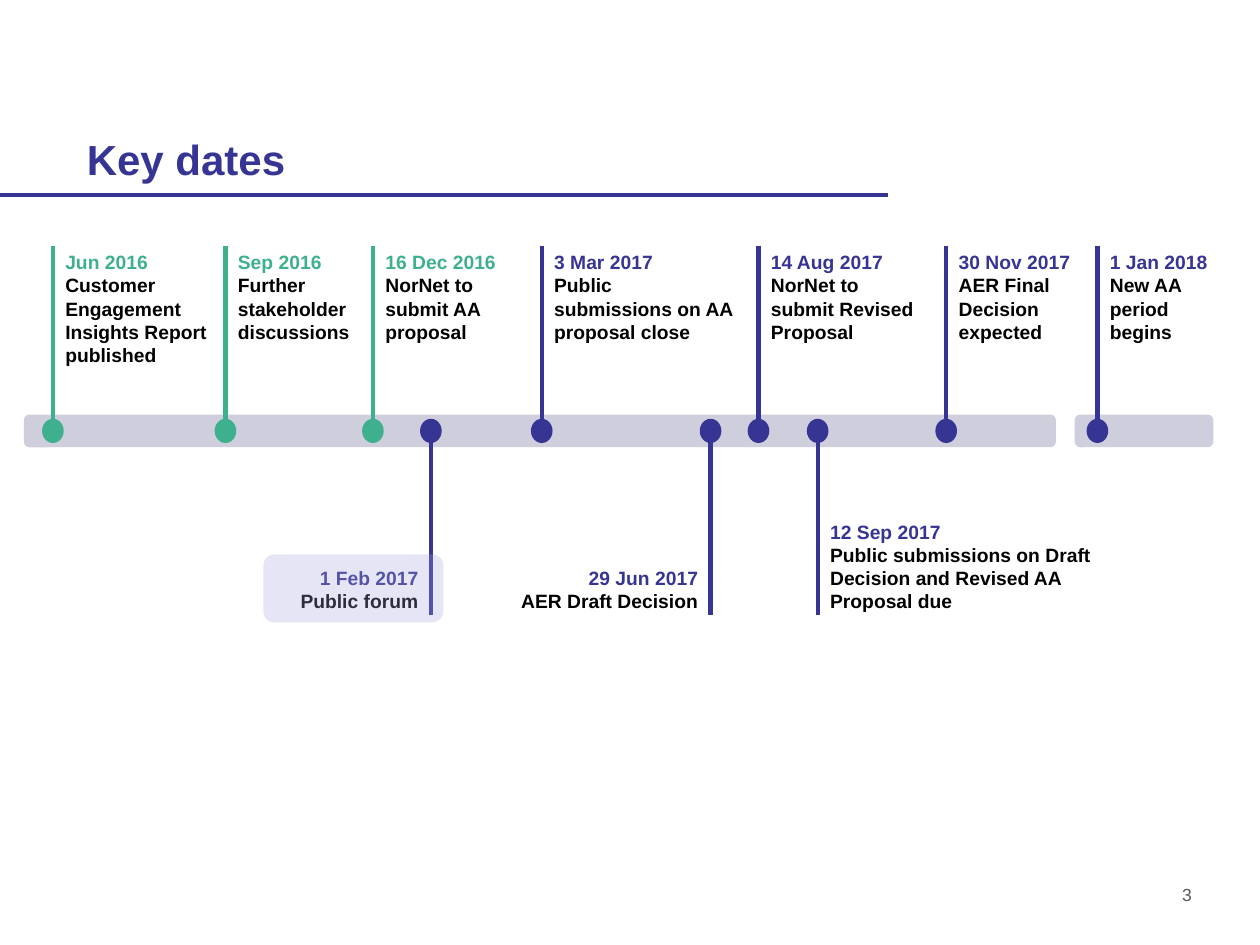
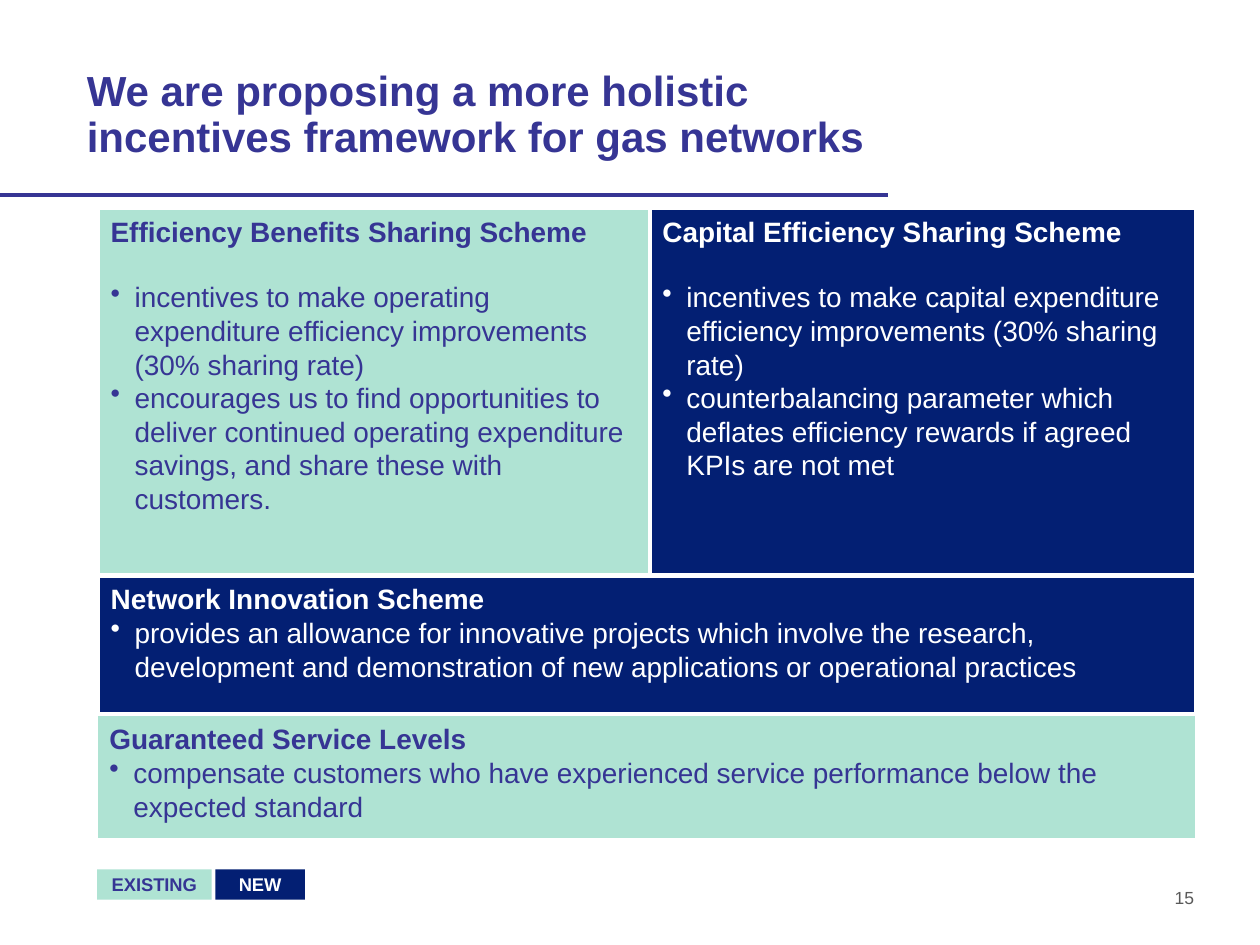
import pptx
import pptx.util
import pptx.dml.color
import pptx.enum.shapes
import pptx.enum.text
import pptx.oxml.ns
from lxml import etree

# Shared look
FONT = "Arial"
INDIGO, NAVY, GREEN, MINT = "363594", "031F73", "3EB08E", "AFE3D3"
WHITE, BLACK, GREY, BAR, LILAC = "FFFFFF", "000000", "595959", "CECEDC", "A5A4DE"
SHAPES = pptx.enum.shapes.MSO_SHAPE
ANCHORS = pptx.enum.text.MSO_ANCHOR
ALIGNS = pptx.enum.text.PP_ALIGN

# Grid of 100 columns by 75 rows
COLUMNS, ROWS = 100, 75
SLIDE_WIDTH, SLIDE_HEIGHT = pptx.util.Inches(10), pptx.util.Inches(7.5)

# Timeline rows
STEM_TOP, DOT_TOP, STEM_BOTTOM = 19.5, 33.3, 48.8
DOT_WIDTH, DOT_HEIGHT = 1.6, 1.8
LABEL_TOP, LABEL_BOTTOM, LABEL_HEIGHT = 19.4, 49.1, 10.3

# column, colour, label width, date, event
EVENTS_ABOVE = [
    (4.2, GREEN, 13.6, "Jun 2016", "Customer Engagement Insights Report published"),
    (17.9, GREEN, 11.6, "Sep 2016", "Further stakeholder discussions"),
    (29.6, GREEN, 13.5, "16 Dec 2016", "NorNet to submit AA proposal"),
    (43, INDIGO, 16.3, "3 Mar 2017", "Public submissions on AA proposal close"),
    (60.2, INDIGO, 14.1, "14 Aug 2017", "NorNet to submit Revised Proposal"),
    (75.1, INDIGO, 11.1, "30 Nov 2017", "AER Final Decision expected"),
    (87.1, INDIGO, 11.8, "1 Jan 2018", "New AA period begins"),
]
# column, label offset, label width, alignment, date, event
EVENTS_BELOW = [
    (34.2, -11.5, 11.5, ALIGNS.RIGHT, "1 Feb 2017", "Public forum"),
    (56.4, -16.7, 16.7, ALIGNS.RIGHT, "29 Jun 2017", "AER Draft Decision"),
    (64.9, 0, 23.6, ALIGNS.LEFT, "12 Sep 2017",
     "Public submissions on Draft Decision and Revised AA Proposal due"),
]

# box, (fill, text colour, border), space after heading, heading, bullets
NEW, EXISTING = (NAVY, WHITE), (MINT, INDIGO)
SCHEMES = [
    ((7.8, 45.7, 87.1, 11), NEW, 2.25, 0, "Network Innovation Scheme", [
        "provides an allowance for innovative projects which involve the research, "
        "development and demonstration of new applications or operational practices"]),
    ((7.8, 16.5, 43.8, 29.1), EXISTING, 2.25, 18.4, "Efficiency Benefits Sharing Scheme", [
        "incentives to make operating expenditure efficiency improvements (30% sharing rate)",
        "encourages us to find opportunities to deliver continued operating expenditure "
        "savings, and share these with customers."]),
    ((51.6, 16.5, 43.3, 29.1), NEW, 2.25, 18.4, "Capital Efficiency Sharing Scheme", [
        "incentives to make capital expenditure efficiency improvements (30% sharing rate)",
        "counterbalancing parameter which deflates efficiency rewards if agreed KPIs "
        "are not met"]),
    ((7.7, 56.8, 87.2, 9.8), EXISTING, 0.85, 0, "Guaranteed Service Levels", [
        "compensate customers who have experienced service performance below the "
        "expected standard"]),
]


def color(hex_value):
    return pptx.dml.color.RGBColor.from_string(hex_value)


def col(count):
    return round(SLIDE_WIDTH * count / COLUMNS)


def row(count):
    return round(SLIDE_HEIGHT * count / ROWS)


def place(left, top, width, height):
    return col(left), row(top), col(width), row(height)


def apply(target, values):
    for attribute, value in values.items():
        setattr(target, attribute, value)


def add_bullet(paragraph):
    properties = paragraph._p.get_or_add_pPr()
    indent = pptx.util.Inches(0.19)
    properties.set("marL", str(indent))
    properties.set("indent", str(-indent))
    mark = etree.SubElement(properties, pptx.oxml.ns.qn("a:buChar"))
    mark.set("char", "•")


def write(shape, lines, anchor=ANCHORS.TOP):
    """Each line is (text, size, colour, bold, paragraph format, bulleted)."""
    frame = shape.text_frame
    apply(frame, {"word_wrap": True, "vertical_anchor": anchor})
    for index, (text, size, hex_value, bold, layout, bulleted) in enumerate(lines):
        paragraph = frame.add_paragraph() if index else frame.paragraphs[0]
        apply(paragraph, {"alignment": ALIGNS.LEFT, **layout})
        if bulleted:
            add_bullet(paragraph)
        run = paragraph.add_run()
        run.text = text
        apply(run.font, {"name": FONT, "size": pptx.util.Pt(size), "bold": bold})
        run.font.color.rgb = color(hex_value)


def add_text(slide, box, lines, anchor=ANCHORS.TOP):
    write(slide.shapes.add_textbox(*place(*box)), lines, anchor)


def add_block(slide, kind, box, fill, border=None, border_width=0.85):
    block = slide.shapes.add_shape(kind, *place(*box))
    block.shadow.inherit = False
    block.fill.solid()
    block.fill.fore_color.rgb = color(fill)
    if border:
        block.line.color.rgb = color(border)
        block.line.width = pptx.util.Pt(border_width)
    else:
        block.line.fill.background()
    return block


def add_line(slide, start, end, hex_value, width):
    line = slide.shapes.add_connector(
        pptx.enum.shapes.MSO_CONNECTOR.STRAIGHT,
        col(start[0]), row(start[1]), col(end[0]), row(end[1]))
    line.line.color.rgb = color(hex_value)
    line.line.width = pptx.util.Pt(width)
    etree.SubElement(line._element.spPr, pptx.oxml.ns.qn("a:effectLst"))


def start_slide(deck, title, title_top, number, number_left, number_top):
    slide = deck.slides.add_slide(deck.slide_layouts[6])
    add_text(slide, (5.9, title_top, 67.9, 9.7),
             [(title, 24, INDIGO, True, {"line_spacing": 0.9}, False)], ANCHORS.BOTTOM)
    add_line(slide, (0, 15.5), (70.5, 15.5), INDIGO, 2.25)
    add_text(slide, (number_left, number_top, 5.4, 2.8),
             [(number, 10, GREY, False, {"alignment": ALIGNS.CENTER}, False)],
             ANCHORS.MIDDLE)
    return slide


def add_event(slide, column, hex_value, stem, label_box, anchor, align, date, event):
    add_line(slide, (column, stem[0]), (column, stem[1]), hex_value, 2.5)
    add_block(slide, SHAPES.FLOWCHART_CONNECTOR,
              (column - DOT_WIDTH / 2, DOT_TOP, DOT_WIDTH, DOT_HEIGHT),
              hex_value, hex_value)
    layout = {"alignment": align}
    add_text(slide, label_box, [(date, 11, hex_value, True, layout, False),
                                (event, 11, BLACK, True, layout, False)], anchor)


def build_key_dates(deck):
    slide = start_slide(deck, "Key dates", 5.4, "3", 91.5, 69.6)
    # Timeline bar in two pieces
    for left, width in ((1.9, 81.9), (85.3, 11)):
        add_block(slide, SHAPES.ROUNDED_RECTANGLE, (left, 32.9, width, 2.6), BAR)
    for column, hex_value, width, date, event in EVENTS_ABOVE:
        add_event(slide, column, hex_value, (STEM_TOP, DOT_TOP),
                  (column, LABEL_TOP, width, LABEL_HEIGHT),
                  ANCHORS.TOP, ALIGNS.LEFT, date, event)
    for column, offset, width, align, date, event in EVENTS_BELOW:
        add_event(slide, column, INDIGO, (DOT_TOP + DOT_HEIGHT, STEM_BOTTOM),
                  (column + offset, LABEL_BOTTOM - LABEL_HEIGHT, width, LABEL_HEIGHT),
                  ANCHORS.BOTTOM, align, date, event)
    # Translucent highlight over the public forum
    highlight = add_block(slide, SHAPES.ROUNDED_RECTANGLE, (20.9, 44, 14.3, 5.4), LILAC)
    tint = highlight._element.spPr.find(".//" + pptx.oxml.ns.qn("a:srgbClr"))
    etree.SubElement(tint, pptx.oxml.ns.qn("a:alpha")).set("val", "28000")


def build_incentives(deck):
    slide = start_slide(
        deck, "We are proposing a more holistic incentives framework for gas networks",
        3.6, "15", 91.3, 69.8)
    for box, (fill, ink), border_width, gap, heading, bullets in SCHEMES:
        block = add_block(slide, SHAPES.RECTANGLE, box, fill, WHITE, border_width)
        spacing = {"space_after": pptx.util.Pt(gap)}
        write(block, [(heading, 16, ink, True, spacing, False)]
              + [(bullet, 16, ink, False, {}, True) for bullet in bullets])
    # Legend
    for left, width, (fill, ink), name in ((7.7, 9.1, EXISTING, "EXISTING"),
                                           (17.1, 7.1, NEW, "NEW")):
        key = add_block(slide, SHAPES.RECTANGLE, (left, 69, width, 2.4), fill)
        write(key, [(name, 10.5, ink, True, {"alignment": ALIGNS.CENTER}, False)],
              ANCHORS.MIDDLE)


def main():
    deck = pptx.Presentation()
    apply(deck, {"slide_width": SLIDE_WIDTH, "slide_height": SLIDE_HEIGHT})
    build_key_dates(deck)
    build_incentives(deck)
    deck.save("out.pptx")


if __name__ == "__main__":
    main()
